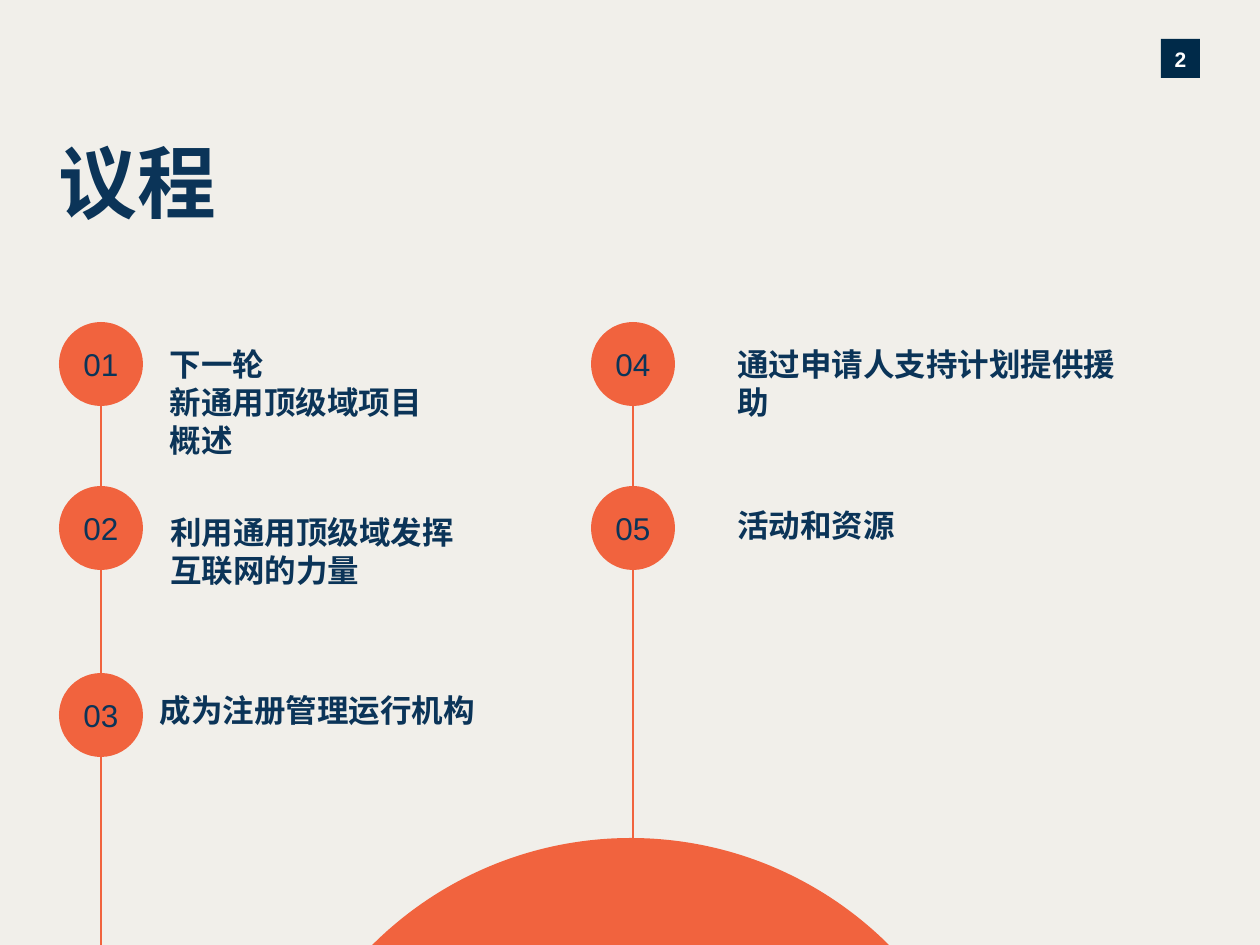
from lxml import etree
from pptx import Presentation, util as u
from pptx.dml.color import RGBColor
from pptx.enum import shapes, text
from pptx.oxml.ns import qn

PX = 7257.14
FONT = "Arial"
HEX = {"paper": "F1EFEA", "coral": "F1633E", "navy": "0B3458", "tab": "002A49", "white": "FFFFFF"}
TITLE = ("议程", (59, 134, 465, 110))
PAGE = ("2", (1161, 39, 39, 39))
ARC = (265, 838, 731, 731)
SIZE, LEFTS, TOPS = 84, (59, 591), (322, 486, 673)
ITEMS = [
    ("01", 0, 0, ["下一轮", "新通用顶级域项目", "概述"], (170, 345, 350, 152)),
    ("02", 0, 1, ["利用通用顶级域发挥互联网的力量"], (170, 513, 309, 149)),
    ("03", 0, 2, ["成为注册管理运行机构"], (160, 691, 350, 115)),
    ("04", 1, 0, ["通过申请人支持计划提供援助"], (737, 345, 386, 115)),
    ("05", 1, 1, ["活动和资源"], (737, 506, 386, 77)),
]


def px(*nums):
    return [u.Emu(round(n * PX)) for n in nums]


def rgb(name):
    return RGBColor.from_string(HEX[name])


def write(shape, lines, size, tint="navy", bold=True, mid=False):
    frame = shape.text_frame
    frame.word_wrap = True
    frame.margin_left = frame.margin_right = frame.margin_top = frame.margin_bottom = 0
    frame.vertical_anchor = text.MSO_ANCHOR.MIDDLE if mid else text.MSO_ANCHOR.TOP
    para = frame.paragraphs[0]
    para.alignment = text.PP_ALIGN.CENTER if mid else text.PP_ALIGN.LEFT
    for i, line in enumerate(lines):
        if i:
            para.add_line_break()
        run = para.add_run()
        run.text = line
        font = run.font
        font.name, font.size, font.bold = FONT, u.Pt(size), bold
        font.color.rgb = rgb(tint)
        east = etree.SubElement(run._r.get_or_add_rPr(), qn("a:ea"))
        east.set("typeface", FONT)
    return para


def draw(kind, box, tint):
    shape = slide.shapes.add_shape(kind, *px(*box))
    shape.shadow.inherit = False
    shape.fill.solid()
    shape.fill.fore_color.rgb = rgb(tint)
    shape.line.fill.background()
    return shape


def label(lines, box, size):
    write(slide.shapes.add_textbox(*px(*box)), lines, size)


deck = Presentation()
deck.slide_width, deck.slide_height = px(1260, 945)
slide = deck.slides.add_slide(deck.slide_layouts[6])
slide.background.fill.solid()
slide.background.fill.fore_color.rgb = rgb("paper")

arc = draw(shapes.MSO_SHAPE.CHORD, ARC, "coral")
arc.rotation = 135
arc.adjustments[0], arc.adjustments[1] = 53.75, 108.21

page = draw(shapes.MSO_SHAPE.RECTANGLE, PAGE[1], "tab")
write(page, [PAGE[0]], 12, "white", mid=True).line_spacing = 1.08
label([TITLE[0]], TITLE[1], 45)

for left in LEFTS:
    x = left + SIZE / 2
    line = slide.shapes.add_connector(shapes.MSO_CONNECTOR.STRAIGHT, *px(x, 391, x, 945))
    line.line.color.rgb = rgb("coral")
    line.line.width = u.Pt(1.25)
    etree.SubElement(line._element.spPr, qn("a:effectLst"))

for num, col, row, lines, box in ITEMS:
    spot = draw(shapes.MSO_SHAPE.ROUND_2_SAME_RECTANGLE, (LEFTS[col], TOPS[row], SIZE, SIZE), "coral")
    spot.adjustments[0] = spot.adjustments[1] = 0.5
    write(spot, [num], 18, bold=False, mid=True)
    label(lines, box, 18)

deck.save("out.pptx")
